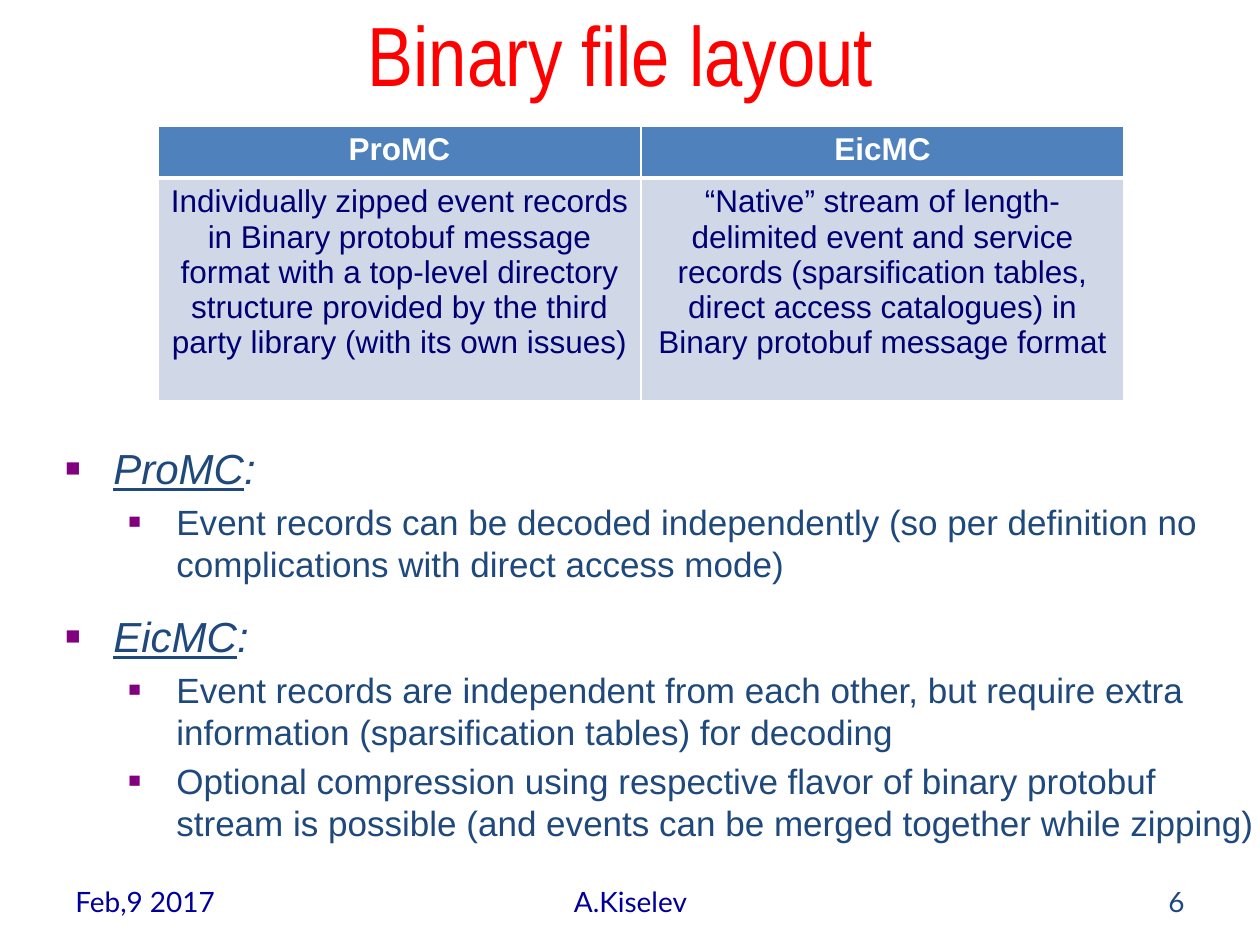
import pptx
import pptx.util
import pptx.dml.color
import pptx.enum.text
import pptx.oxml
import pptx.oxml.ns

PX = 914400 / 126
ALIGN = pptx.enum.text.PP_ALIGN
ANCHOR = pptx.enum.text.MSO_ANCHOR
COLORS = {
    "title": "FF0000", "footer": "000099", "body": "1F497D", "bullet": "800080",
    "header": "4F81BD", "cell": "D0D8E8", "cell_text": "000073", "white": "FFFFFF",
}
HEADER = ("ProMC", "EicMC")
DESCRIPTIONS = (
    "Individually zipped event records in Binary protobuf message format with a "
    "top-level directory structure provided by the third party library (with its own issues)",
    "“Native” stream of length-delimited event and service records (sparsification tables, "
    "direct access catalogues) in Binary protobuf message format",
)
PROMC_POINTS = (
    "Event records can be decoded independently (so per definition no complications "
    "with direct access mode)",
)
EICMC_POINTS = (
    "Event records are independent from each other, but require extra information "
    "(sparsification tables) for decoding",
    "Optional compression using respective flavor of binary protobuf stream is possible "
    "(and events can be merged together while zipping)",
)


def px(length):
    return pptx.util.Emu(round(length * PX))


def rgb(name):
    return pptx.dml.color.RGBColor.from_string(COLORS[name])


def add_run(paragraph, text, color, size, **format_values):
    run = paragraph.add_run()
    run.text = text
    run.font.color.rgb = rgb(color)
    run.font.size = pptx.util.Pt(size)
    for attribute, value in format_values.items():
        setattr(run.font, attribute, value)


def add_frame(slide, box, **format_values):
    frame = slide.shapes.add_textbox(*map(px, box)).text_frame
    for attribute, value in {"word_wrap": True, **format_values}.items():
        setattr(frame, attribute, value)
    return frame


def add_line(slide, box, text, align, color, size, font):
    frame = add_frame(slide, box, vertical_anchor=ANCHOR.MIDDLE)
    paragraph = frame.paragraphs[0]
    paragraph.alignment = align
    add_run(paragraph, text, color, size, name=font)


def add_bullet(paragraph, indent):
    properties = paragraph._p.get_or_add_pPr()
    properties.set("marL", str(px(indent)))
    properties.set("indent", str(px(-48)))
    namespace = pptx.oxml.ns.nsdecls("a")
    for element in (
        f'<a:buClr {namespace}><a:srgbClr val="{COLORS["bullet"]}"/></a:buClr>',
        f'<a:buSzPct {namespace} val="60000"/>',
        f'<a:buFont {namespace} typeface="Arial"/>',
        f'<a:buChar {namespace} char="■"/>',
    ):
        properties.append(pptx.oxml.parse_xml(element))


def add_section(slide, box, heading, points):
    frame = add_frame(slide, box, margin_top=px(12))
    topic = frame.paragraphs[0]
    add_bullet(topic, 48)
    add_run(topic, heading, "body", 24, name="Arial", italic=True, underline=True)
    add_run(topic, ":", "body", 24, name="Arial", italic=True)
    for point in points:
        detail = frame.add_paragraph()
        add_bullet(detail, 111)
        detail.space_before = pptx.util.Pt(4)
        add_run(detail, point, "body", 20, name="Arial")


def set_borders(cell, bottom):
    properties = cell._tc.get_or_add_tcPr()
    for side, width in {"L": 1, "R": 1, "T": 1, "B": bottom}.items():
        properties.append(pptx.oxml.parse_xml(
            f'<a:ln{side} {pptx.oxml.ns.nsdecls("a")} w="{pptx.util.Pt(width)}">'
            f'<a:solidFill><a:srgbClr val="{COLORS["white"]}"/></a:solidFill></a:ln{side}>'))


def fill_row(table, index, texts, fill, color, bold, bottom):
    for cell, text in zip(table.rows[index].cells, texts):
        set_borders(cell, bottom)
        cell.fill.solid()
        cell.fill.fore_color.rgb = rgb(fill)
        paragraph = cell.text_frame.paragraphs[0]
        paragraph.alignment = ALIGN.CENTER
        add_run(paragraph, text, color, 18, name="Arial", bold=bold)


def add_comparison(slide):
    table = slide.shapes.add_table(2, 2, *map(px, (158, 126, 966, 275))).table
    table.horz_banding = False
    for row, height in zip(table.rows, (52, 223)):
        row.height = px(height)
    fill_row(table, 0, HEADER, "header", "white", True, 3)
    fill_row(table, 1, DESCRIPTIONS, "cell", "cell_text", False, 1)


def main():
    presentation = pptx.Presentation()
    presentation.slide_width, presentation.slide_height = px(1260), px(945)
    slide = presentation.slides.add_slide(presentation.slide_layouts[6])
    add_line(slide, (-21, 0, 1302, 105), "Binary file layout ", ALIGN.CENTER,
             "title", 48, "Arial Narrow")
    add_comparison(slide)
    add_section(slide, (53, 431, 1197, 179), "ProMC", PROMC_POINTS)
    add_section(slide, (53, 599, 1229, 305), "EicMC", EICMC_POINTS)
    for left, width, text, align, color in (
        (63, 294, "Feb,9 2017", ALIGN.LEFT, "footer"),
        (431, 399, "A.Kiselev", ALIGN.CENTER, "footer"),
        (903, 294, "6", ALIGN.RIGHT, "body"),
    ):
        add_line(slide, (left, 876, width, 50), text, align, color, 16, "Lato")
    presentation.save("out.pptx")


if __name__ == "__main__":
    main()
